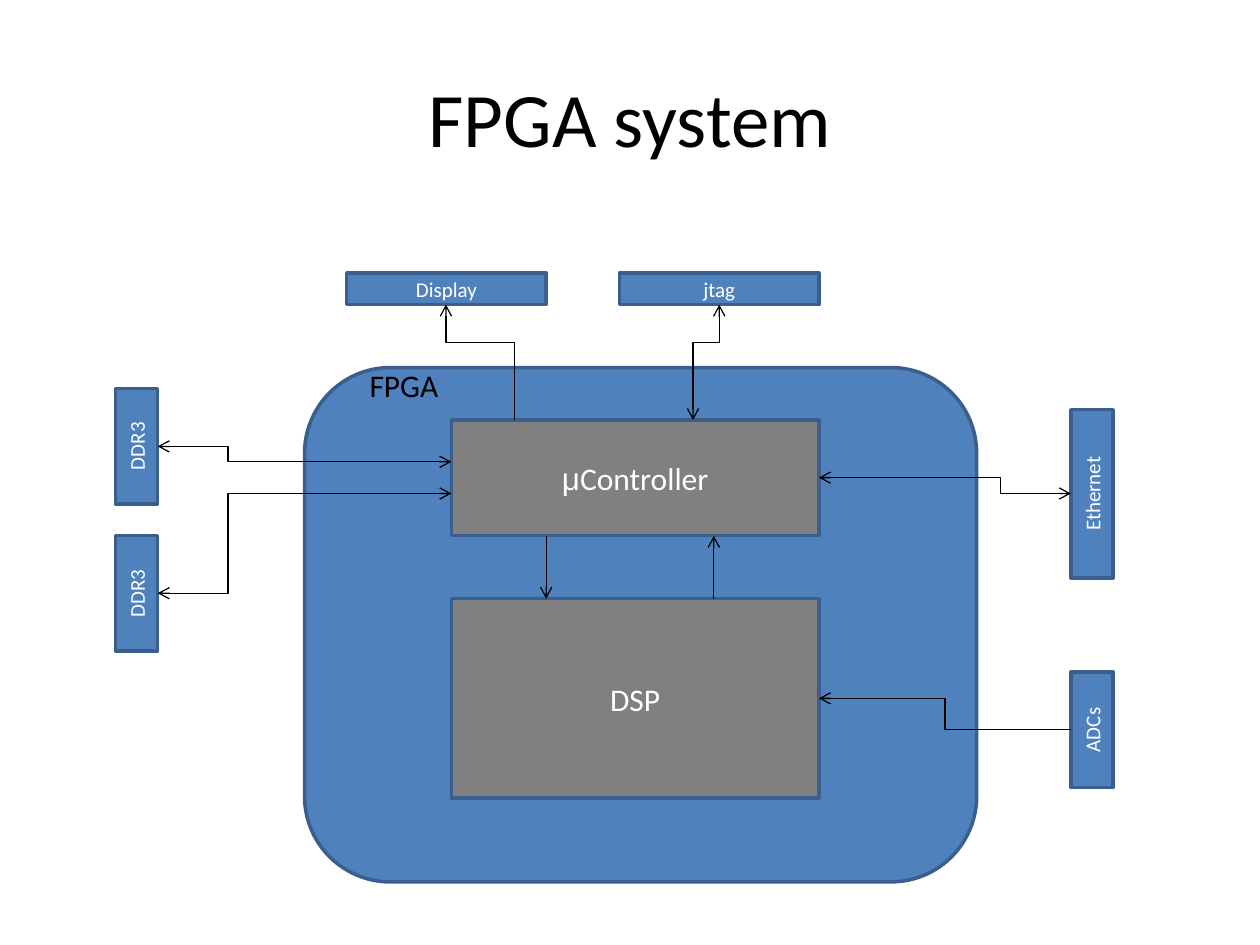
from lxml import etree
from pptx import Presentation
from pptx import util as u
from pptx.dml.color import RGBColor
from pptx.enum import shapes, text
from pptx.oxml.ns import qn

BLUE, GRAY, EDGE = "4F81BD", "808080", "3A5F8C"
WHITE, BLACK = "FFFFFF", "000000"
BODY = "Calibri"

TITLE = "FPGA system"
FRAME = (6.14, 7.41, 13.55, 10.37)
CORES = [
    ([("μ", "Arial"), ("Controller", BODY)], (9.1, 8.47, 7.41, 2.33)),
    ([("DSP", BODY)], (9.1, 12.07, 7.41, 4.02)),
]
PORTS = [
    ("DDR3", (2.33, 7.83, 0.85, 2.33)),
    ("DDR3", (2.33, 10.8, 0.85, 2.33)),
    ("Ethernet", (21.59, 8.26, 0.85, 3.39)),
    ("ADCs", (21.59, 13.55, 0.85, 2.33)),
    ("Display", (6.99, 5.5, 4.02, 0.64)),
    ("jtag", (12.49, 5.5, 4.02, 0.64)),
]
DROPS = [
    ((8.99, 6.14), (10.37, 8.47), 0.33, ["head"]),
    ((14.5, 6.14), (13.97, 8.47), 0.33, ["head", "tail"]),
]
BENDS = [
    ((3.18, 9), (9.1, 9.31), 0.24, ["head", "tail"]),
    ((3.18, 11.96), (9.1, 9.95), 0.24, ["head", "tail"]),
    ((21.59, 9.95), (16.51, 9.63), 0.28, ["head", "tail"]),
    ((21.59, 14.71), (16.51, 14.08), 0.5, ["tail"]),
]
LINKS = [
    ((11.01, 10.8), (11.01, 12.07)),
    ((14.39, 12.07), (14.39, 10.8)),
]

prs = Presentation()
prs.slide_width, prs.slide_height = u.Cm(25.4), u.Cm(19.05)
slide = prs.slides.add_slide(prs.slide_layouts[6])


def cms(nums):
    return [u.Cm(n) for n in nums]


def color(code):
    return RGBColor.from_string(code)


def write(shape, runs, size, tint, align=text.PP_ALIGN.CENTER):
    frame = shape.text_frame
    frame.word_wrap = True
    frame.vertical_anchor = text.MSO_ANCHOR.MIDDLE
    para = frame.paragraphs[0]
    para.alignment = align
    for words, face in runs:
        run = para.add_run()
        run.text = words
        run.font.size = u.Pt(size)
        run.font.name = face
        run.font.color.rgb = color(tint)
    return frame


def block(kind, area, fill):
    shape = slide.shapes.add_shape(kind, *cms(area))
    shape.shadow.inherit = False
    shape.fill.solid()
    shape.fill.fore_color.rgb = color(fill)
    shape.line.color.rgb = color(EDGE)
    shape.line.width = u.Pt(2)
    return shape


def wire(kind, start, end, tips):
    line = slide.shapes.add_connector(kind, *cms(start + end))
    line.line.color.rgb = color(BLACK)
    line.line.width = u.Pt(0.75)
    props = line.element.spPr
    for tip in tips:
        etree.SubElement(props.find(qn("a:ln")), qn(f"a:{tip}End"), type="arrow")
    etree.SubElement(props, qn("a:effectLst"))
    return line


def bend(start, end, turn, tips):
    line = wire(shapes.MSO_CONNECTOR.ELBOW, start, end, tips)
    guide = line.element.spPr.find(".//" + qn("a:avLst"))
    etree.SubElement(guide, qn("a:gd"), name="adj1", fmla=f"val {round(turn * 100000)}")
    return line


def drop(start, end, turn, tips):
    (x1, y1), (x2, y2) = start, end
    midx, midy = (x1 + x2) / 2, (y1 + y2) / 2
    halfx, halfy = (x2 - x1) / 2, (y2 - y1) / 2
    line = bend((midx - halfy, midy + halfx), (midx + halfy, midy - halfx), turn, tips)
    line.element.spPr.find(qn("a:xfrm")).set("rot", str(90 * 60000))


title = slide.shapes.add_textbox(*cms((1.27, 0.76, 22.86, 3.18)))
write(title, [(TITLE, BODY)], 44, BLACK)

block(shapes.MSO_SHAPE.ROUNDED_RECTANGLE, FRAME, BLUE)
for runs, area in CORES:
    write(block(shapes.MSO_SHAPE.RECTANGLE, area, GRAY), runs, 18, WHITE)
for name, area in PORTS:
    port = block(shapes.MSO_SHAPE.RECTANGLE, area, BLUE)
    write(port, [(name, BODY)], 12, WHITE)
    if area[3] > area[2]:
        port.element.txBody.bodyPr.set("vert", "vert270")

label = slide.shapes.add_textbox(*cms((7.2, 7.25, 1.9, 1.02)))
frame = write(label, [("FPGA", BODY)], 18, BLACK, text.PP_ALIGN.LEFT)
frame.vertical_anchor = text.MSO_ANCHOR.TOP
frame.word_wrap = False
frame.auto_size = text.MSO_AUTO_SIZE.SHAPE_TO_FIT_TEXT

for item in DROPS:
    drop(*item)
for item in BENDS:
    bend(*item)
for start, end in LINKS:
    wire(shapes.MSO_CONNECTOR.STRAIGHT, start, end, ["tail"])

prs.save("out.pptx")
